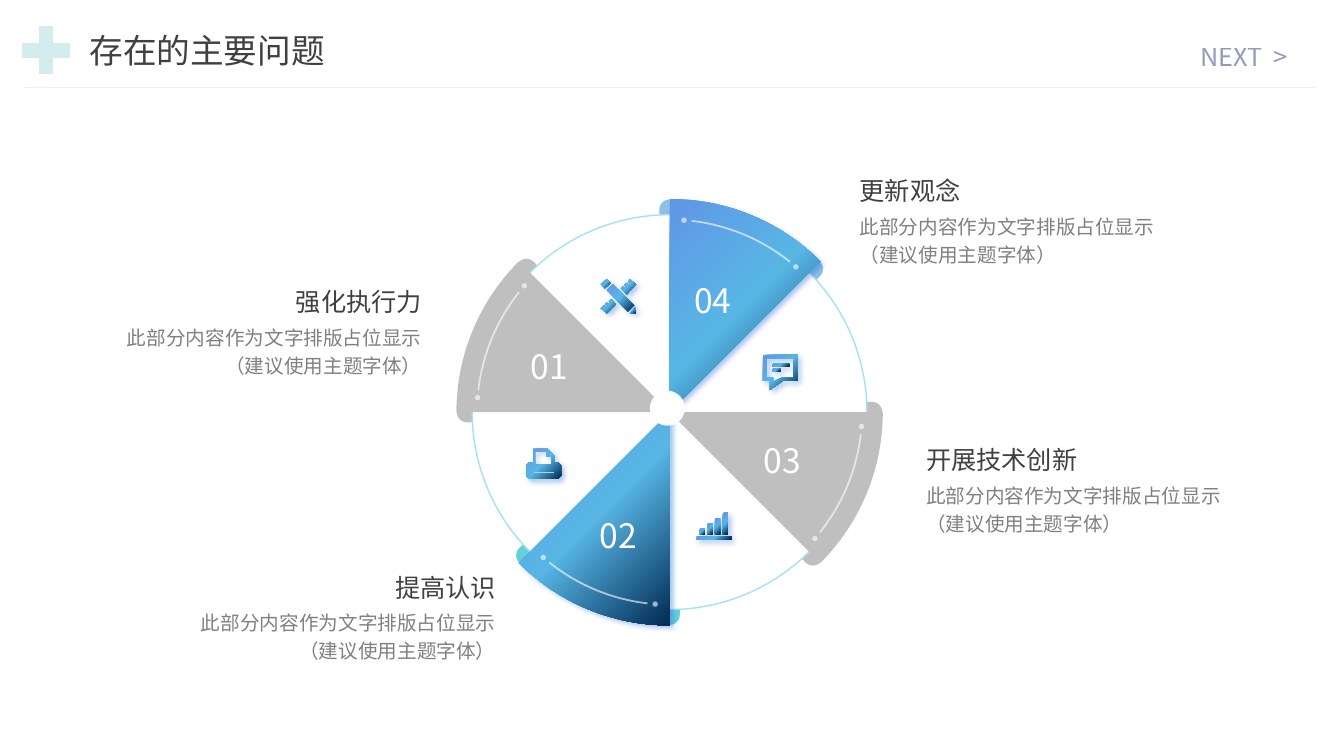
from copy import deepcopy
from math import cos, radians, sin

from lxml import etree
from pptx import Presentation
from pptx.dml.color import RGBColor
from pptx.enum.shapes import MSO_CONNECTOR, MSO_SHAPE
from pptx.enum.text import MSO_ANCHOR, PP_ALIGN
from pptx.oxml.ns import qn
from pptx.util import Pt

RECT, OVAL = MSO_SHAPE.RECTANGLE, MSO_SHAPE.OVAL
ROUNDED, PLUS = MSO_SHAPE.ROUNDED_RECTANGLE, MSO_SHAPE.MATH_PLUS
LEFT, RIGHT = PP_ALIGN.LEFT, PP_ALIGN.RIGHT
TOP, MIDDLE = MSO_ANCHOR.TOP, MSO_ANCHOR.MIDDLE
FONT = "Noto Sans CJK SC"
GRAY, BLUE, TEAL, WHITE = "BFBFBF", "8EC0E4", "64D1DA", "FFFFFF"
GRADIENT = [(0, "6096E6"), (0.5, "58B6E5"), (1, "012B55")]
CX, CY = 478.3, 294.4
colour = RGBColor.from_string

prs = Presentation()
prs.slide_width, prs.slide_height = Pt(960), Pt(540)
slide = prs.slides.add_slide(prs.slide_layouts[6])
shapes = slide.shapes


def outline(contours, left=0, top=0, closed=True):
    builder = None
    for contour in contours:
        start, *rest = [(x * 100, y * 100) for x, y in contour]
        if builder is None:
            builder = shapes.build_freeform(*start, scale=Pt(1) / 100)
        else:
            builder.move_to(*start)
        builder.add_line_segments(rest, close=closed)
    return builder.convert_to_shape(Pt(left), Pt(top))


def fade(element, percent):
    rgb = element.find(".//" + qn("a:srgbClr"))
    etree.SubElement(rgb, qn("a:alpha"), val=str(percent * 1000))


filled = []

plus = shapes.add_shape(PLUS, Pt(8.8), Pt(12), Pt(48), Pt(48))
filled.append((plus, "D4ECEE"))
divider = shapes.add_connector(MSO_CONNECTOR.STRAIGHT, Pt(16.6), Pt(62.3), Pt(940.3), Pt(62.3))
divider.line.color.rgb = colour("F2F2F2")
divider.line.width = Pt(0.5)

for spoke, tab_colour in enumerate([GRAY, GRAY, TEAL, TEAL, GRAY, GRAY, BLUE, BLUE]):
    angle = radians(spoke * 45)
    tab = shapes.add_shape(ROUNDED, Pt(CX + 137 * cos(angle) - 15), Pt(CY + 137 * sin(angle) - 7.3),
                           Pt(30), Pt(14.6))
    tab.adjustments[0] = 0.5
    tab.rotation = spoke * 45
    filled.append((tab, tab_colour))

ring = shapes.add_shape(OVAL, Pt(CX - 141), Pt(CY - 141), Pt(282), Pt(282))
filled.append((ring, WHITE))

dots, arcs = [], []
for start, wedge_fill in [(270, GRADIENT), (90, GRADIENT), (0, GRAY), (180, GRAY)]:
    rim = [radians(start + step) for step in range(46)]
    wedge = outline([[(CX, CY)] + [(CX + 152.3 * cos(a), CY + 152.3 * sin(a)) for a in rim]])
    filled.append((wedge, wedge_fill))
    sweep = [radians(start + 6.6 + step) for step in range(33)]
    arcs.append(outline([[(CX + 137.5 * cos(a), CY + 137.5 * sin(a)) for a in sweep]], closed=False))
    for offset in (4.3, 41):
        a = radians(start + offset)
        dot = shapes.add_shape(OVAL, Pt(CX + 137.5 * cos(a) - 1.9), Pt(CY + 137.5 * sin(a) - 1.9),
                               Pt(3.8), Pt(3.8))
        dots.append(dot)
        filled.append((dot, WHITE))

hub = shapes.add_shape(OVAL, Pt(464.2), Pt(279.1), Pt(25), Pt(25))
filled.append((hub, WHITE))

printer = [
    [(23, 10), (20, 10), (20, 5), (15, 0), (5, 0), (5, 10), (2, 10), (0, 12), (0, 19.5),
     (2, 21.5), (23, 21.5), (25, 19.5), (25, 12)],
    [(6.5, 2), (14.4, 2), (14.4, 5.8), (18, 5.8), (18, 11.5), (6.5, 11.5)],
    [(5, 16.5), (20, 16.5), (20, 18), (5, 18)],
]
speech_bubble = [
    [(0, 0), (0, 18.7), (5, 18.7), (5, 25.2), (14.4, 18.7), (24.6, 18.7), (24.6, 0)],
    [(21.6, 16.6), (13, 16.6), (7.2, 19.4), (7.2, 16.6), (2.9, 16.6), (2.9, 2.9), (21.6, 2.9)],
]
pencil_and_ruler = [
    [(7.2, 2.9), (4.3, 0), (0, 3.6), (2.9, 6.5)],
    [(24.5, 20.2), (20.9, 24.5), (25.2, 24.5)],
    [(25.2, 3.6), (20.9, 0), (19.4, 2.2), (20.5, 3.2), (19.8, 3.9), (18.5, 2.7), (16.6, 4.3),
     (18, 5.8), (17.3, 6.5), (15.8, 5), (14.4, 6.5), (18.7, 10.8)],
    [(8.6, 15.1), (7.2, 14.4), (5.8, 15.8), (6.8, 17), (5.9, 18), (4.3, 16.6), (2.9, 18),
     (4.3, 19.4), (3.6, 20.2), (2.2, 18.7), (0, 20.9), (4.3, 24.5), (10.8, 18)],
    [(8.6, 3.6), (4.3, 7.9), (19.4, 23), (23.8, 18.7)],
]
icon_parts = [(printer, 375.8, 320.4), (speech_bubble, 545, 253.4)]
icon_parts += [([part], 429.1, 199.4) for part in pencil_and_ruler]
for contours, left, top in icon_parts:
    filled.append((outline(contours, left, top), GRADIENT))

icon_bars = [(499.7 + 5.5 * i, 377.8 - 3.8 * i, 3.8, 3.8 * (i + 1)) for i in range(4)]
icon_bars += [(497.5, 383.1, 25, 2.5), (551.5, 259.9, 12.2, 2), (551.5, 263.5, 5.8, 2)]
for bar in icon_bars:
    filled.append((shapes.add_shape(RECT, *[Pt(length) for length in bar]), GRADIENT))

for shape in shapes:
    etree.SubElement(shape._element.spPr, qn("a:effectLst"))

for shape, fill in filled:
    shape.line.fill.background()
    if fill != GRADIENT:
        shape.fill.solid()
        shape.fill.fore_color.rgb = colour(fill)
        continue
    shape.fill.gradient()
    shape.fill.gradient_angle = 315
    properties = shape._element.spPr
    stops = properties.find(".//" + qn("a:gsLst"))
    stops.insert(1, deepcopy(stops[0]))
    for stop, (position, stop_colour) in zip(shape.fill.gradient_stops, GRADIENT):
        stop.position = position
        stop.color.rgb = colour(stop_colour)
    glow = etree.SubElement(properties.find(qn("a:effectLst")), qn("a:outerShdw"), blurRad=str(Pt(4)),
                            dist=str(Pt(3)), dir="2700000", algn="tl", rotWithShape="0")
    etree.SubElement(glow, qn("a:srgbClr"), val="2169D3")
    fade(glow, 40)

for dot in dots:
    fade(dot._element.spPr, 60)
for arc in arcs:
    arc.fill.background()
for shape, line_colour, width in [(plus, WHITE, 1), (ring, "A5DFF9", 1)] + [(arc, WHITE, 1.3) for arc in arcs]:
    shape.line.color.rgb = colour(line_colour)
    shape.line.width = Pt(width)
for arc in arcs:
    fade(arc._element.spPr, 60)

texts = [
    ("NEXT  >", 850.3, 2.9, 133.2, 74.9, 18, "324274", LEFT, MIDDLE, None),
    ("存在的主要问题", 56.9, 17.3, 196, 37.4, 24, "404040", LEFT, MIDDLE, None),
]
for number, left, top in [("01", 372.2, 243.4), ("02", 421.2, 364.3), ("03", 538.6, 311), ("04", 488.9, 196.6)]:
    texts.append((number, left, top, 44, 36, 24, WHITE, LEFT, TOP, None))
captions = [
    ("更新观念", 607, 125.3, 252, LEFT),
    ("强化执行力", 56.9, 204.8, 251.5, RIGHT),
    ("提高认识", 124.6, 408.5, 236.6, RIGHT),
    ("开展技术创新", 654.5, 317.5, 264, LEFT),
]
for heading, left, top, width, align in captions:
    texts.append(("此部分内容作为文字排版占位显示\n（建议使用主题字体）", left, top + 21, width, 47.5,
                  14, "808080", align, TOP, 1.2))
    texts.append((heading, left, top, width, 25.2, 18, "404040", align, TOP, Pt(18)))

for text, left, top, width, height, size, text_colour, align, anchor, spacing in texts:
    frame = shapes.add_textbox(Pt(left), Pt(top), Pt(width), Pt(height)).text_frame
    frame.word_wrap = True
    frame.vertical_anchor = anchor
    frame.text = text
    for paragraph in frame.paragraphs:
        paragraph.alignment = align
        paragraph.line_spacing = spacing
        run = paragraph.runs[0]
        run.font.size = Pt(size)
        run.font.color.rgb = colour(text_colour)
        run.font.name = FONT
        etree.SubElement(run._r.rPr, qn("a:ea"), typeface=FONT)
        if text.startswith("NEXT"):
            fade(run._r, 53)

prs.save("out.pptx")
